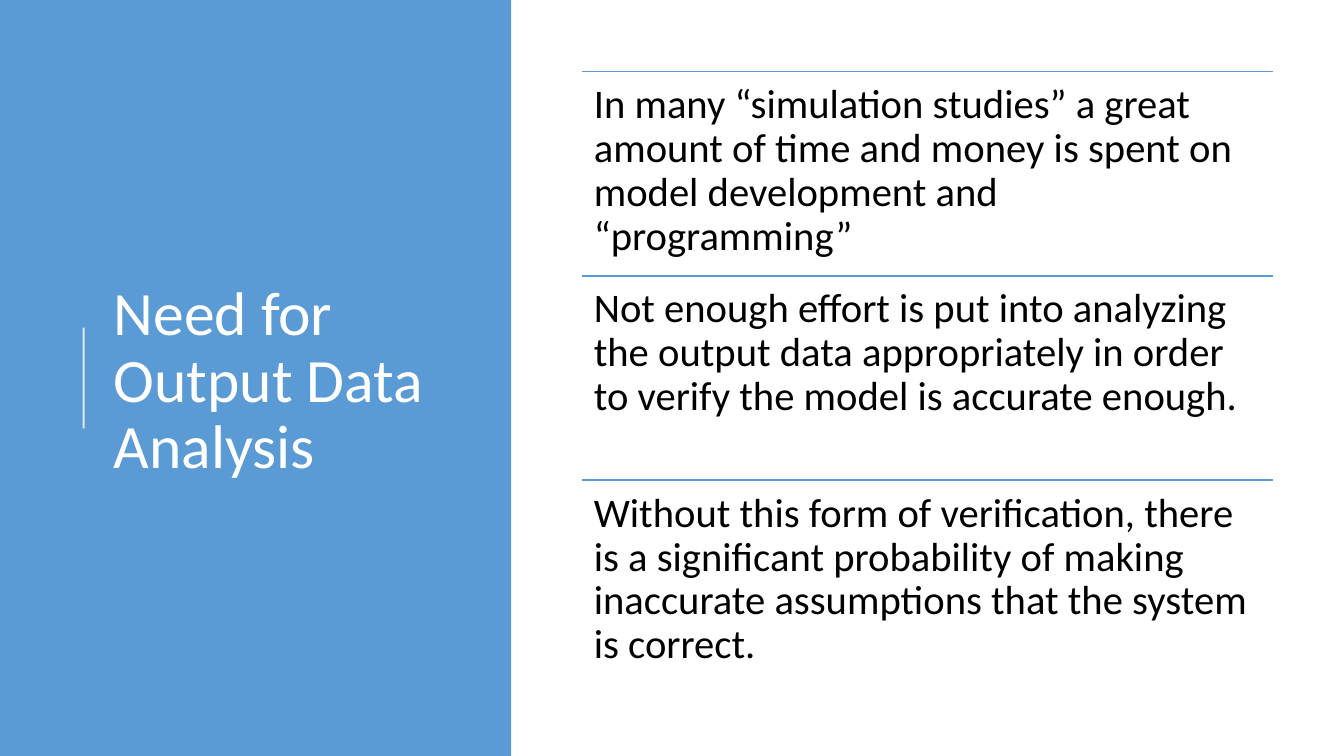
from dataclasses import dataclass

from lxml import etree
from pptx import Presentation
from pptx.dml.color import RGBColor
from pptx.enum import shapes as s, text as t
from pptx.oxml.ns import qn
from pptx.shapes.connector import Connector
from pptx.slide import Slide
from pptx.util import Inches, Pt


@dataclass(frozen=True)
class Theme:
    blue: RGBColor = RGBColor(0x5B, 0x9B, 0xD5)
    white: RGBColor = RGBColor(255, 255, 255)
    black: RGBColor = RGBColor(0, 0, 0)
    font: str = "Calibri"
    title: float = 44
    body: float = 29


@dataclass(frozen=True)
class Box:
    left: float
    top: float
    width: float
    height: float


@dataclass(frozen=True)
class Label:
    words: str
    box: Box
    size: float
    color: RGBColor
    side: float
    edge: float
    anchor: t.MSO_ANCHOR


@dataclass(frozen=True)
class Rule:
    start: tuple[float, float]
    end: tuple[float, float]
    color: RGBColor
    weight: float


THEME = Theme()
POINTS = (
    "In many “simulation studies” a great amount of time and money is spent on "
    "model development and “programming”",
    "Not enough effort is put into analyzing the output data appropriately in "
    "order to verify the model is accurate enough.",
    "Without this form of verification, there is a significant probability of "
    "making inaccurate assumptions that the system is correct.",
)
LIST = Box(5.77, 0.71, 6.86, 6.08)


def add_label(slide: Slide, label: Label) -> None:
    box = label.box
    shape = slide.shapes.add_textbox(
        Inches(box.left), Inches(box.top), Inches(box.width), Inches(box.height))
    frame = shape.text_frame
    frame.word_wrap = True
    frame.vertical_anchor = label.anchor
    frame.margin_left = frame.margin_right = Inches(label.side)
    frame.margin_top = frame.margin_bottom = Inches(label.edge)
    para = frame.paragraphs[0]
    para.text = label.words
    para.line_spacing = 0.9
    para.font.name = THEME.font
    para.font.size = Pt(label.size)
    para.font.color.rgb = label.color


def add_rule(slide: Slide, rule: Rule) -> Connector:
    ends = [Inches(n) for n in (*rule.start, *rule.end)]
    line = slide.shapes.add_connector(s.MSO_CONNECTOR.STRAIGHT, *ends)
    line.line.color.rgb = rule.color
    line.line.width = Pt(rule.weight)
    etree.SubElement(line._element.spPr, qn("a:effectLst"))
    return line


def add_panel(slide: Slide) -> None:
    panel = slide.shapes.add_shape(
        s.MSO_SHAPE.RECTANGLE, 0, 0, Inches(5.07), Inches(7.5))
    panel.shadow.inherit = False
    panel.fill.solid()
    panel.fill.fore_color.rgb = THEME.blue
    panel.line.fill.background()


def main() -> None:
    deck = Presentation()
    deck.slide_width, deck.slide_height = Inches(13.33), Inches(7.5)
    slide = deck.slides.add_slide(deck.slide_layouts[6])

    # Blue title panel with a translucent accent line
    add_panel(slide)
    accent = add_rule(slide, Rule((0.83, 4.25), (0.83, 3.25), THEME.white, 1.5))
    tint = accent._element.spPr.find(".//" + qn("a:srgbClr"))
    etree.SubElement(tint, qn("a:alpha"), val="80000")
    add_label(slide, Label(
        "Need for Output Data Analysis", Box(1.03, 0.78, 3.69, 6.02),
        THEME.title, THEME.white, 0.1, 0.05, t.MSO_ANCHOR.MIDDLE))

    # Points in equal rows, each under a rule
    step = LIST.height / len(POINTS)
    for row, words in enumerate(POINTS):
        top = LIST.top + row * step
        add_rule(slide, Rule(
            (LIST.left, top), (LIST.left + LIST.width, top), THEME.blue, 1))
        add_label(slide, Label(
            words, Box(LIST.left, top, LIST.width, step),
            THEME.body, THEME.black, 0.12, 0.12, t.MSO_ANCHOR.TOP))

    deck.save("out.pptx")


if __name__ == "__main__":
    main()
